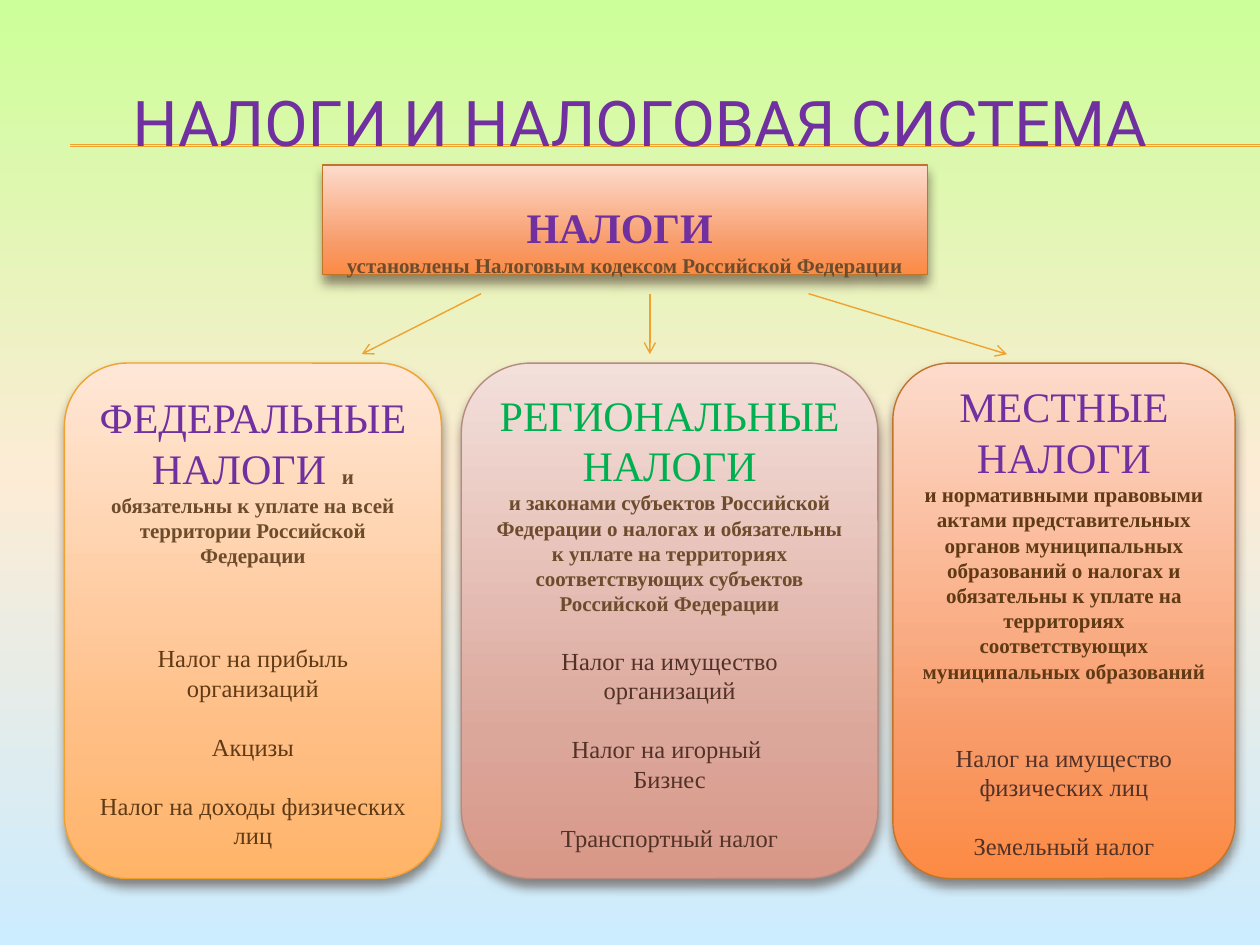
import copy
from lxml import etree
from pptx import Presentation
from pptx.dml.color import RGBColor
from pptx.enum import shapes, text
from pptx.oxml import parse_xml
from pptx.oxml.ns import nsdecls, qn
from pptx.util import Cm, Pt

THEME = {
    "background": [(0, "CCFF99"), (50, "FCECD5"), (100, "CCECFF")],
    "peach": [(0, "FFE7D7"), (72, "FFBE84"), (100, "FFB468")],
    "rose": [(0, "F3E0DB"), (72, "DCA79B"), (100, "D89787")],
    "orange": [(0, "FDDBCC"), (72, "F89B69"), (100, "FC8A43")],
    "gold": "F0A22E", "rust": "C17529", "mauve": "B58B80",
    "purple": "7030A0", "green": "00B050", "shadow": "4E3B30",
    "tan": "6C4C2C", "brown": "603A14", "dark": "523227",
    "title_font": "Roboto", "body_font": "Times New Roman",
    "title": 36, "heading": 24, "item": 14, "note": 12,
}


def gradient(fill, root, stops):
    """Fill from top to bottom with three colour stops; root holds the fill's XML."""
    fill.gradient()
    fill.gradient_angle = 270
    gs_list = root.xpath(".//a:gsLst")[0]
    gs_list.append(copy.deepcopy(gs_list[-1]))
    for stop, (position, color) in zip(fill.gradient_stops, stops):
        stop.position = position / 100
        stop.color.rgb = RGBColor.from_string(color)


def write(p, runs, gap=0):
    """Fill a centred paragraph with (text, size, colour, bold) runs; gap is in points."""
    p.alignment = text.PP_ALIGN.CENTER
    p.space_before = Pt(gap)
    for words, size, color, bold in runs:
        r = p.add_run()
        r.text = words
        values = {"name": THEME["body_font"], "size": Pt(THEME[size]), "bold": bold}
        for name, value in values.items():
            setattr(r.font, name, value)
        r.font.color.rgb = RGBColor.from_string(THEME[color])


prs = Presentation()
prs.slide_width, prs.slide_height = Cm(25.4), Cm(19.05)
s = prs.slides.add_slide(prs.slide_layouts[5])
gradient(s.background.fill, s._element.xpath(".//p:bg")[0], THEME["background"])

# Title
title = s.shapes.title
title.left, title.top, title.width, title.height = Cm(0.84), Cm(1.27), Cm(24.13), Cm(2.34)
tf = title.text_frame
tf.vertical_anchor = text.MSO_ANCHOR.MIDDLE
write(tf.paragraphs[0], [("НАЛОГИ И НАЛОГОВАЯ СИСТЕМА", "title", "purple", False)])
tf.paragraphs[0].runs[0].font.name = THEME["title_font"]

# Boxes: left, top, width, height, shape, fill, line, paragraphs of (runs, gap before)
COLUMN_TOP, COLUMN_HEIGHT = 7.32, 10.39
RECT, ROUND = shapes.MSO_SHAPE.RECTANGLE, shapes.MSO_SHAPE.ROUNDED_RECTANGLE
boxes = [
    (6.5, 3.33, 12.2, 2.21, RECT, "orange", "rust", [
        ([("НАЛОГИ ", "heading", "purple", True)], 0),
        ([("установлены Налоговым кодексом Российской Федерации",
           "note", "tan", True)], 0),
    ]),
    (1.3, COLUMN_TOP, 7.6, COLUMN_HEIGHT, ROUND, "peach", "gold", [
        ([("ФЕДЕРАЛЬНЫЕ НАЛОГИ ", "heading", "purple", False),
          (" и обязательны к уплате на всей территории Российской Федерации",
           "note", "tan", True)], 0),
        ([("Налог на прибыль организаций", "item", "brown", False)], 43),
        ([("Акцизы", "item", "brown", False)], 17),
        ([("Налог на доходы физических лиц", "item", "brown", False)], 17),
    ]),
    (9.3, COLUMN_TOP, 8.4, COLUMN_HEIGHT, ROUND, "rose", "mauve", [
        ([("РЕГИОНАЛЬНЫЕ НАЛОГИ", "heading", "green", False)], 0),
        ([("и законами субъектов Российской Федерации о налогах и обязательны "
           "к уплате на территориях соответствующих субъектов Российской Федерации",
           "note", "tan", True)], 0),
        ([("Налог на имущество организаций", "item", "dark", False)], 17),
        ([("Налог на игорный ", "item", "dark", False)], 17),
        ([("Бизнес", "item", "dark", False)], 0),
        ([("Транспортный налог", "item", "dark", False)], 17),
    ]),
    (18, COLUMN_TOP, 6.9, COLUMN_HEIGHT, ROUND, "orange", "rust", [
        ([("МЕСТНЫЕ НАЛОГИ", "heading", "purple", False)], 0),
        ([("и нормативными правовыми актами представительных органов "
           "муниципальных образований о налогах и обязательны к уплате на "
           "территориях соответствующих муниципальных образований",
           "note", "brown", True)], 0),
        ([("Налог на имущество физических лиц", "item", "dark", False)], 34),
        ([("Земельный налог", "item", "dark", False)], 17),
    ]),
]
for left, top, width, height, kind, fill, line, paragraphs in boxes:
    sp = s.shapes.add_shape(kind, Cm(left), Cm(top), Cm(width), Cm(height))
    gradient(sp.fill, sp._element.spPr, THEME[fill])
    sp.line.color.rgb = RGBColor.from_string(THEME[line])
    sp.line.width = Pt(0.79)
    sp._element.spPr.append(parse_xml(
        f'<a:effectLst {nsdecls("a")}><a:outerShdw blurRad="{Pt(6)}" dist="{Pt(4)}" '
        f'dir="5400000" rotWithShape="0"><a:srgbClr val="{THEME["shadow"]}">'
        '<a:alpha val="60000"/></a:srgbClr></a:outerShdw></a:effectLst>'))
    tf = sp.text_frame
    tf.word_wrap = True
    tf.vertical_anchor = text.MSO_ANCHOR.MIDDLE
    if kind == RECT:
        tf.vertical_anchor = text.MSO_ANCHOR.TOP
        tf.margin_top = Cm(0.74)
    for i, (runs, gap) in enumerate(paragraphs):
        write(tf.add_paragraph() if i else tf.paragraphs[0], runs, gap)

# Rules behind the title, then arrows from the top box to the columns
ARROW_TOP, ARROW_END = 5.92, 7.14
lines = [
    (1.42, 2.92, 25.4, 2.92, False),
    (1.42, 2.95, 25.4, 2.95, False),
    (9.7, ARROW_TOP, 7.29, ARROW_END, True),
    (16.3, ARROW_TOP, 20.3, ARROW_END, True),
    (13.1, ARROW_TOP, 13.1, ARROW_END, True),
]
for x1, y1, x2, y2, is_arrow in lines:
    c = s.shapes.add_connector(shapes.MSO_CONNECTOR.STRAIGHT, Cm(x1), Cm(y1), Cm(x2), Cm(y2))
    c.line.color.rgb = RGBColor.from_string(THEME["gold"])
    c.line.width = Pt(0.79 if is_arrow else 0.75)
    etree.SubElement(c._element.spPr, qn("a:effectLst"))
    if is_arrow:
        etree.SubElement(c.line._get_or_add_ln(), qn("a:tailEnd"), type="arrow")
    else:
        title._element.addprevious(c._element)

prs.save("out.pptx")
